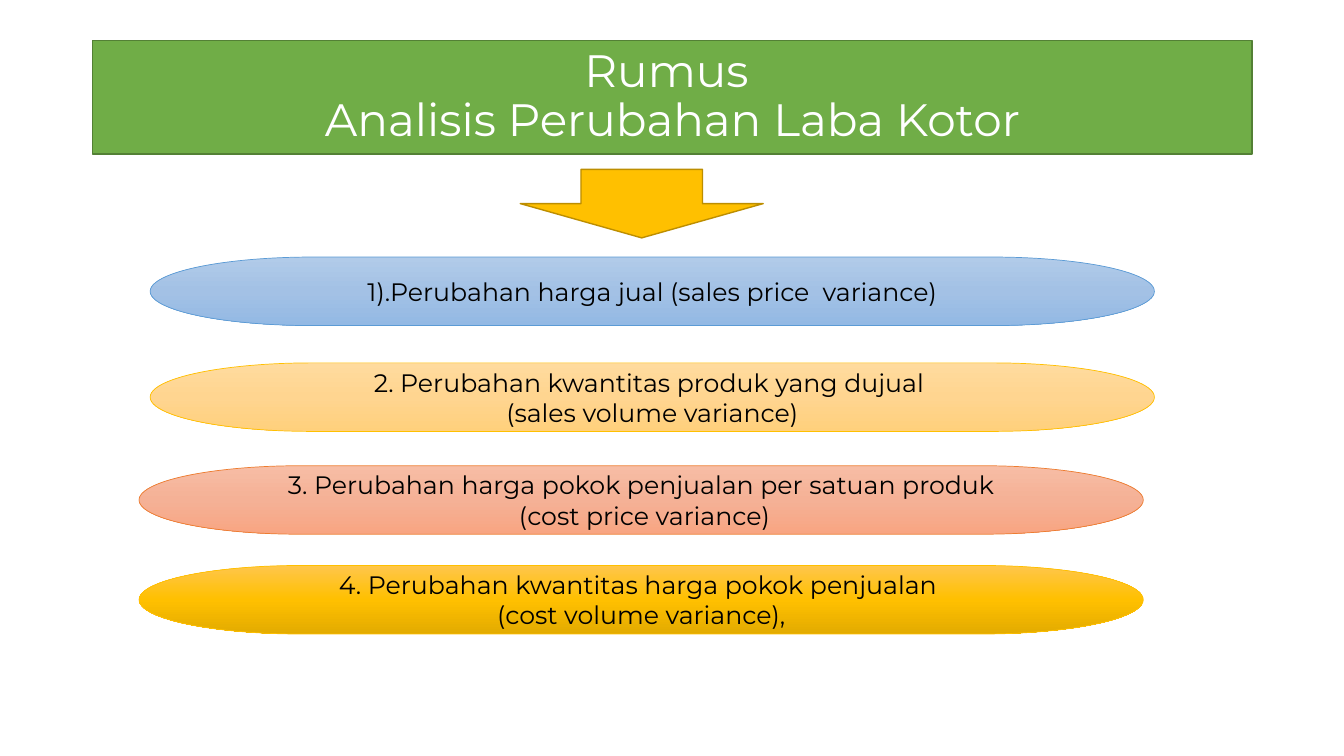
from copy import deepcopy

from pptx import Presentation
from pptx.dml.color import RGBColor
from pptx.enum.shapes import MSO_SHAPE as Shape
from pptx.enum.text import MSO_ANCHOR as Anchor, PP_ALIGN as Align
from pptx.oxml.ns import qn
from pptx.util import Inches, Pt

WHITE = RGBColor(0xFF, 0xFF, 0xFF)
BLACK = RGBColor(0x00, 0x00, 0x00)
GREEN = RGBColor(0x70, 0xAD, 0x47)
DARK_GREEN = RGBColor(0x53, 0x80, 0x35)
GOLD = RGBColor(0xFF, 0xC0, 0x00)
DARK_GOLD = RGBColor(0xBD, 0x8E, 0x00)
BLUE = RGBColor(0x5B, 0x9B, 0xD5)
ORANGE = RGBColor(0xED, 0x7D, 0x31)
BLUE_FADE = (RGBColor(0xB1, 0xCB, 0xE9), RGBColor(0xA3, 0xC1, 0xE5), RGBColor(0x93, 0xB9, 0xE4))
CREAM_FADE = (RGBColor(0xFF, 0xDB, 0x9E), RGBColor(0xFF, 0xD5, 0x90), RGBColor(0xFF, 0xD0, 0x7C))
SALMON_FADE = (RGBColor(0xF7, 0xBD, 0xA5), RGBColor(0xF5, 0xB1, 0x96), RGBColor(0xF8, 0xA5, 0x82))
GOLD_FADE = (RGBColor(0xFF, 0xC6, 0x4B), GOLD, RGBColor(0xE3, 0xAB, 0x00))

VARIANCES = (
    (14.9, 25.5, BLUE_FADE, BLUE, ("1).Perubahan harga jual (sales price  variance)",)),
    (14.9, 36, CREAM_FADE, GOLD,
     ("2. Perubahan kwantitas produk yang dujual ", "(sales volume variance)")),
    (13.8, 46.2, SALMON_FADE, ORANGE,
     ("3. Perubahan harga pokok penjualan per satuan produk", " (cost price variance)")),
    (13.8, 56.1, GOLD_FADE, GOLD,
     ("4. Perubahan kwantitas harga pokok penjualan ", "(cost volume variance),")),
)


class SlideBuilder:
    """Draws styled elements on one slide, placed by grid columns and rows."""

    cell = Inches(0.1)
    font = "Montserrat"

    def __init__(self, page):
        self.page = page

    def shape(self, kind, place, line_color, line_width):
        box = self.page.shapes.add_shape(kind, *(round(units * self.cell) for units in place))
        box.shadow.inherit = False
        box.line.color.rgb = line_color
        box.line.width = Pt(line_width)
        return box

    def solid(self, box, color):
        box.fill.solid()
        box.fill.fore_color.rgb = color

    def fade(self, box, colors):
        box.fill.gradient()
        box.fill.gradient_angle = 270
        stop_list = box.element.spPr.find(qn("a:gradFill")).find(qn("a:gsLst"))
        stop_list.insert(1, deepcopy(stop_list[0]))
        for index, (stop, color) in enumerate(zip(box.fill.gradient_stops, colors)):
            stop.position = index / (len(colors) - 1)
            stop.color.rgb = color

    def label(self, box, lines, size, color, spacing=None):
        frame = box.text_frame
        frame.word_wrap = True
        frame.vertical_anchor = Anchor.MIDDLE
        frame.text = "\n".join(lines)
        paragraph_format = {"alignment": Align.CENTER, "line_spacing": spacing}
        font_format = {"name": self.font, "size": Pt(size)}
        for para in frame.paragraphs:
            for name, value in paragraph_format.items():
                setattr(para, name, value)
            for span in para.runs:
                for name, value in font_format.items():
                    setattr(span.font, name, value)
                span.font.color.rgb = color

    def title(self, text, place):
        box = self.shape(Shape.RECTANGLE, place, DARK_GREEN, 1)
        self.solid(box, GREEN)
        self.label(box, (text,), 32.4, WHITE, 0.9)

    def arrow(self, place):
        box = self.shape(Shape.DOWN_ARROW, place, DARK_GOLD, 1)
        self.solid(box, GOLD)

    def variance(self, column, row, colors, line_color, lines):
        place = (column, row, 99.6, 6.8)
        box = self.shape(Shape.FLOWCHART_TERMINATOR, place, line_color, 0.5)
        self.fade(box, colors)
        self.label(box, lines, 18, BLACK)


def main():
    deck = Presentation()
    deck.slide_width, deck.slide_height = Inches(13.33), Inches(7.5)
    builder = SlideBuilder(deck.slides.add_slide(deck.slide_layouts[6]))
    builder.title("Rumus \vAnalisis Perubahan Laba Kotor", (9.2, 4, 115, 11.3))
    for variance in VARIANCES:
        builder.variance(*variance)
    builder.arrow((51.6, 16.8, 24.1, 6.8))
    deck.save("out.pptx")


if __name__ == "__main__":
    main()
